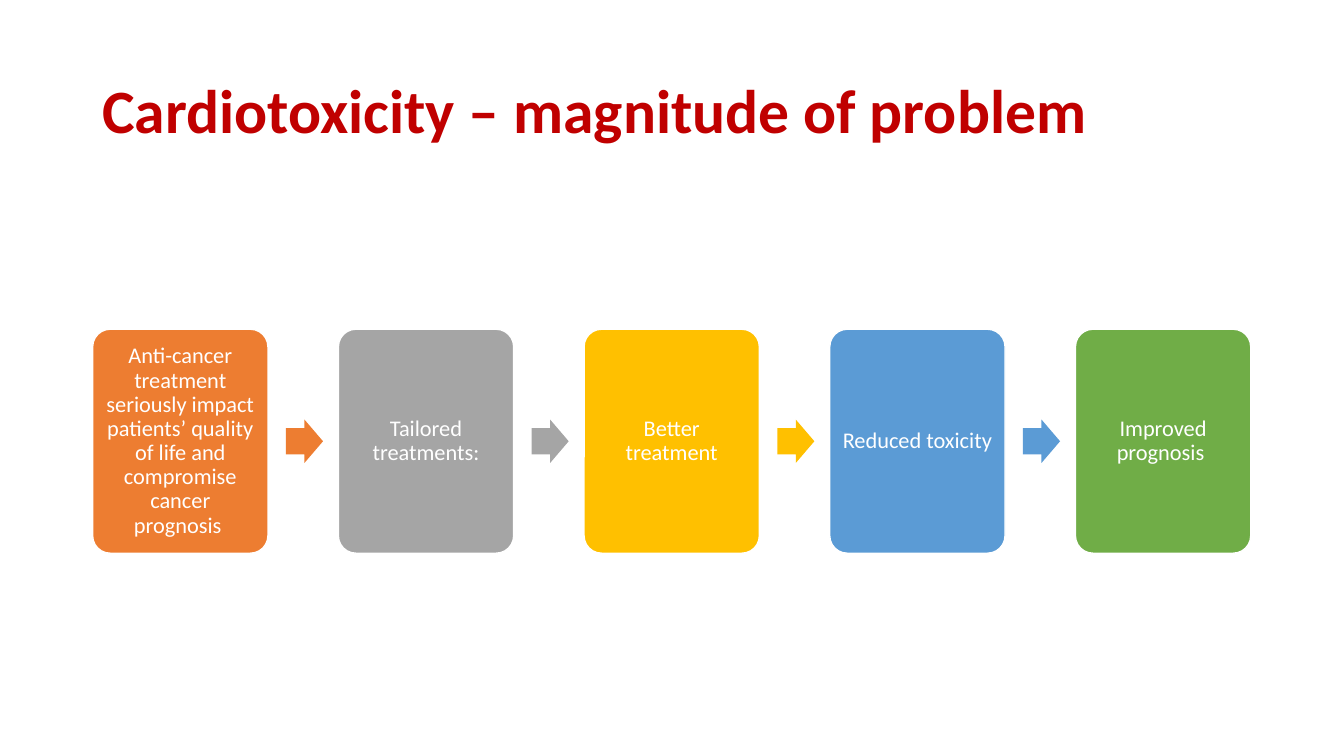
from pptx import Presentation
from pptx.dml.color import RGBColor
from pptx.enum.shapes import MSO_SHAPE
from pptx.enum.text import MSO_ANCHOR, PP_ALIGN
from pptx.util import Pt

FONT = "Calibri"
WHITE = RGBColor(0xFF, 0xFF, 0xFF)
RED = RGBColor(0xC0, 0x00, 0x00)
ORANGE = RGBColor(0xED, 0x7D, 0x31)
GREY = RGBColor(0xA5, 0xA5, 0xA5)
GOLD = RGBColor(0xFF, 0xC0, 0x00)
BLUE = RGBColor(0x5B, 0x9B, 0xD5)
GREEN = RGBColor(0x70, 0xAD, 0x47)

STEPS = [
    ("Anti-cancer treatment seriously impact patients’ quality of life "
     "and compromise cancer prognosis ", ORANGE),
    ("Tailored treatments:", GREY),
    ("Better treatment", GOLD),
    ("Reduced toxicity ", BLUE),
    ("Improved prognosis ", GREEN),
]

# Row of steps, in points
LEFT, PITCH = 66.2, 175.5
CARD_W, CARD_H = 125.2, 160
ARROW_W, ARROW_H, ARROW_DX = 26.5, 31, 138
MIDDLE = 315.2


def set_text(frame, text, size, color, bold=False):
    frame.text = text
    frame.word_wrap = True
    frame.vertical_anchor = MSO_ANCHOR.MIDDLE
    para = frame.paragraphs[0]
    para.line_spacing = 0.9
    font = para.runs[0].font
    font.name, font.size, font.bold = FONT, Pt(size), bold
    font.color.rgb = color
    return para


def add_title(slide, text):
    box = slide.shapes.add_textbox(Pt(66), Pt(28.8), Pt(828), Pt(104.4))
    set_text(box.text_frame, text, 44, RED, bold=True)


def add_block(slide, kind, left, width, height, color):
    top = MIDDLE - height / 2
    block = slide.shapes.add_shape(kind, Pt(left), Pt(top), Pt(width), Pt(height))
    block.shadow.inherit = False
    block.fill.solid()
    block.fill.fore_color.rgb = color
    return block


def add_card(slide, left, text, color):
    card = add_block(slide, MSO_SHAPE.ROUNDED_RECTANGLE, left, CARD_W, CARD_H, color)
    card.adjustments[0] = 0.1
    card.line.color.rgb = WHITE
    card.line.width = Pt(1)
    frame = card.text_frame
    frame.margin_left = frame.margin_right = Pt(4.8)
    frame.margin_top = frame.margin_bottom = Pt(4.8)
    set_text(frame, text, 16, WHITE).alignment = PP_ALIGN.CENTER


def add_arrow(slide, left, color):
    arrow = add_block(slide, MSO_SHAPE.RIGHT_ARROW, left, ARROW_W, ARROW_H, color)
    arrow.adjustments[0] = 0.6
    arrow.adjustments[1] = 0.5
    arrow.line.fill.background()


def main():
    deck = Presentation()
    deck.slide_width, deck.slide_height = Pt(960), Pt(540)
    slide = deck.slides.add_slide(deck.slide_layouts[6])

    # Title
    add_title(slide, "Cardiotoxicity – magnitude of problem")

    # Steps, with an arrow after each but the last
    for i, (text, color) in enumerate(STEPS):
        left = LEFT + i * PITCH
        add_card(slide, left, text, color)
        if i < len(STEPS) - 1:
            add_arrow(slide, left + ARROW_DX, color)

    deck.save("out.pptx")


if __name__ == "__main__":
    main()
